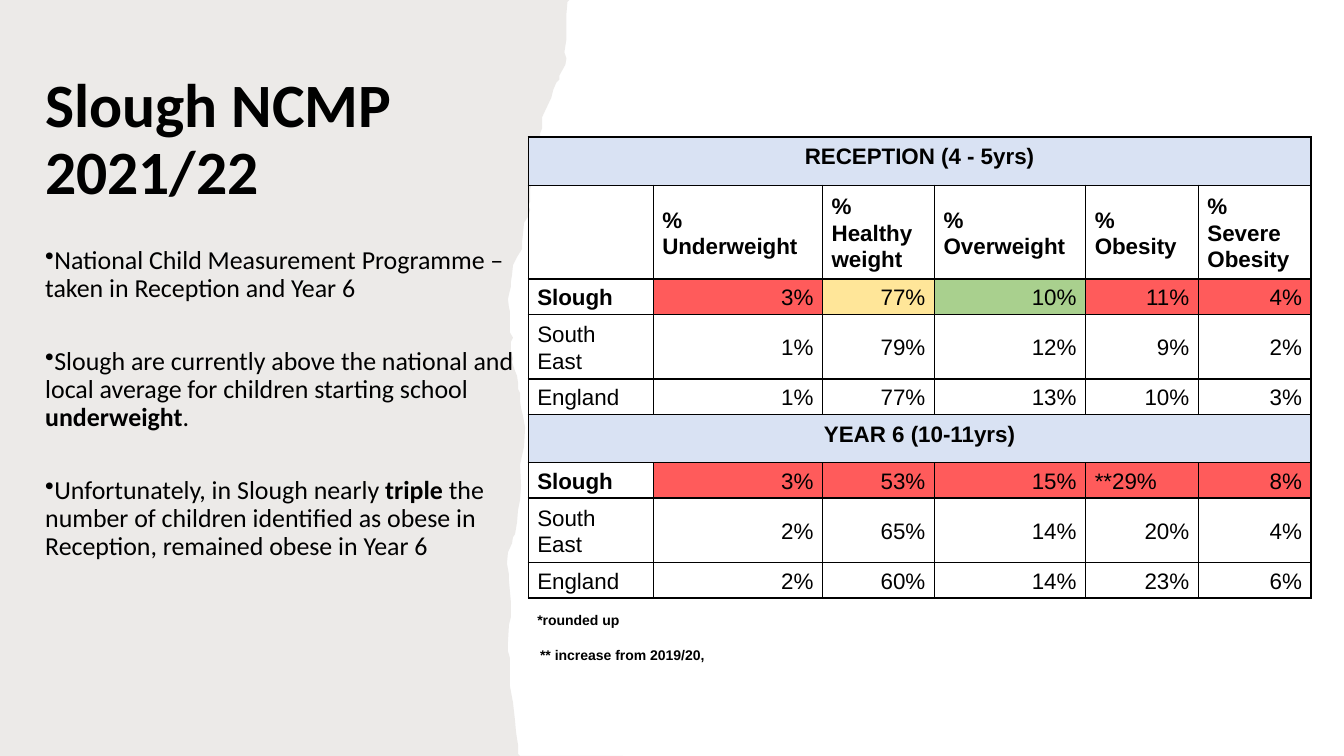
from dataclasses import dataclass
from typing import Any, NamedTuple

from lxml import etree
from pptx import Presentation
from pptx import util as u
from pptx.dml import color as dml
from pptx.enum import text
from pptx.oxml import ns

BLACK, RED, AMBER, GREEN, BANNER = "000000", "FF5B5B", "FFE699", "A9D08E", "D9E2F3"
LEFT, CENTER, RIGHT = text.PP_ALIGN.LEFT, text.PP_ALIGN.CENTER, text.PP_ALIGN.RIGHT
TOP, MIDDLE = text.MSO_ANCHOR.TOP, text.MSO_ANCHOR.MIDDLE


class Run(NamedTuple):
    text: str
    bold: bool = False


class Box(NamedTuple):
    left: float
    top: float
    width: float
    height: float


@dataclass(frozen=True)
class Entry:
    text: str = ""
    bold: bool = False
    size: float = 16
    align: Any = LEFT
    fill: str = ""
    banner: bool = False
    span: int = 1


COLUMNS = [3.15, 4.27, 2.82, 3.81, 2.84, 2.84]
HEIGHTS = [1.6, 1.22, 2.36, 0.89, 1.63, 0.89, 1.22, 0.89, 1.63, 0.89, 1.07, 1.07]
HEADINGS = ["Underweight", "Healthy weight", "Overweight", "Obesity", "Severe Obesity"]
RECEPTION = {
    "Slough": ["3%", "77%", "10%", "11%", "4%"],
    "South East": ["1%", "79%", "12%", "9%", "2%"],
    "England": ["1%", "77%", "13%", "10%", "3%"],
}
YEAR_6 = {
    "Slough": ["3%", "53%", "15%", "**29%", "8%"],
    "South East": ["2%", "65%", "14%", "20%", "4%"],
    "England": ["2%", "60%", "14%", "23%", "6%"],
}
POINTS = [
    [Run("National Child Measurement Programme – taken in Reception and Year 6")],
    [Run("Slough are currently above the national and local average for children "
         "starting school "), Run("underweight", True), Run(".")],
    [Run("Unfortunately, in Slough nearly "), Run("triple", True),
     Run(" the number of children identified as obese in Reception, "
         "remained obese in Year 6")],
]
TORN_EDGE = [
    (565, 0), (563, 2), (562, 14), (562, 20), (562, 39), (560, 52), (562, 58),
    (561, 64), (560, 66), (555, 75), (555, 79), (552, 82), (549, 89), (547, 97),
    (538, 116), (538, 127), (536, 132), (536, 142), (533, 149), (532, 154),
    (529, 160), (528, 169), (529, 173), (528, 180), (526, 188), (526, 197),
    (526, 200), (524, 204), (526, 208), (525, 212), (524, 215), (520, 221),
    (519, 231), (518, 240), (518, 247), (513, 255), (509, 263), (508, 273),
    (507, 279), (507, 284), (505, 292), (504, 297), (505, 305), (506, 309),
    (506, 326), (506, 330), (509, 335), (507, 339), (507, 348), (509, 356),
    (508, 359), (511, 368), (513, 373), (514, 380), (514, 386), (516, 390),
    (516, 398), (517, 405), (519, 413), (521, 424), (520, 443), (516, 461),
    (517, 482), (516, 496), (514, 506), (513, 518), (511, 530), (509, 533),
    (508, 539), (504, 548), (503, 559), (505, 570), (505, 576), (507, 598),
    (507, 612), (505, 620), (504, 637), (504, 646), (506, 653), (506, 681),
    (509, 697), (511, 715), (512, 726), (513, 733), (514, 739), (514, 748),
    (516, 750),
]


def rgb(value: str) -> dml.RGBColor:
    return dml.RGBColor.from_string(value)


def apply(target: Any, formats: dict[str, Any]) -> None:
    for name, value in formats.items():
        setattr(target, name, value)


def add_run(p: Any, run: Run, size: float, font: str) -> None:
    r = p.add_run()
    r.text = run.text
    apply(r.font, {"name": font, "size": u.Pt(size), "bold": run.bold})
    r.font.color.rgb = rgb(BLACK)


def add_paper(s: Any) -> None:
    builder = s.shapes.build_freeform(0, 0, scale=u.Cm(2.54) / 100)
    builder.add_line_segments(TORN_EDGE + [(618, 750), (0, 750)], close=True)
    sp = builder.convert_to_shape()
    sp.shadow.inherit = False
    sp.line.fill.background()
    sp.fill.solid()
    sp.fill.fore_color.rgb = rgb("82766A")
    shade = sp.fill._xPr.find(".//" + ns.qn("a:srgbClr"))
    etree.SubElement(shade, ns.qn("a:alpha"), val="15000")


def add_text(s: Any, box: Box, paragraphs: list[list[Run]], size: float,
             anchor: Any, gap: float = 0, bullet: str = "") -> None:
    tf = s.shapes.add_textbox(*map(u.Cm, box)).text_frame
    apply(tf, {"word_wrap": True, "vertical_anchor": anchor})
    for i, runs in enumerate(paragraphs):
        p = tf.add_paragraph() if i else tf.paragraphs[0]
        apply(p, {"line_spacing": 0.9, "space_after": u.Pt(gap)})
        if bullet:
            pPr = p._p.get_or_add_pPr()
            pPr.set("marL", "0")
            pPr.set("indent", str(-u.Cm(0.64)))
            etree.SubElement(pPr, ns.qn("a:buChar"), char=bullet)
        for run in runs:
            add_run(p, run, size, "Calibri")


def set_borders(cell: Any, sides: str) -> None:
    tcPr = cell._tc.get_or_add_tcPr()
    for i, side in enumerate("LRTB"):
        ln = etree.Element(ns.qn(f"a:ln{side}"), w=str(u.Pt(1)))
        if side in sides:
            fill = etree.SubElement(ln, ns.qn("a:solidFill"))
            etree.SubElement(fill, ns.qn("a:srgbClr"), val=BLACK)
        else:
            etree.SubElement(ln, ns.qn("a:noFill"))
        tcPr.insert(i, ln)


def fill_cell(cell: Any, entry: Entry) -> None:
    side, top, bottom = (0.3, 0.15, 0.15) if entry.banner else (0.23, 0.03, 0)
    apply(cell, {
        "margin_left": u.Cm(side), "margin_right": u.Cm(side),
        "margin_top": u.Cm(top), "margin_bottom": u.Cm(bottom),
        "vertical_anchor": TOP if entry.banner else MIDDLE,
    })
    p = cell.text_frame.paragraphs[0]
    apply(p, {"alignment": entry.align, "line_spacing": 1.07, "space_after": u.Pt(8)})
    add_run(p, Run(entry.text, entry.bold), entry.size, "Arial")


def region_rows(regions: dict[str, list[str]], shades: list[str]) -> list[list[Entry]]:
    rows = []
    for region, values in regions.items():
        local = region == "Slough"
        rows.append([Entry(region, local)] + [
            Entry(value, align=LEFT if value.startswith("**") else RIGHT,
                  fill=shade if local else "")
            for value, shade in zip(values, shades)])
    return rows


def banner_row(title: str) -> list[Entry]:
    return [Entry(title, True, align=CENTER, fill=BANNER, banner=True, span=6)]


def add_results(s: Any) -> None:
    rows = [
        [Entry(span=3)],
        banner_row("RECEPTION (4 - 5yrs)"),
        [Entry()] + [Entry(f"% {heading}", True) for heading in HEADINGS],
        *region_rows(RECEPTION, [RED, AMBER, GREEN, RED, RED]),
        banner_row("YEAR 6 (10-11yrs)"),
        *region_rows(YEAR_6, [RED] * 5),
        [Entry("*rounded up", True, 10)],
        [Entry("** increase from 2019/20,", True, 10, banner=True, span=2)],
    ]
    edges = {0: "B", 10: "T", 11: ""}
    box = Box(13.31, 1.85, sum(COLUMNS), sum(HEIGHTS))
    table = s.shapes.add_table(len(rows), len(COLUMNS), *map(u.Cm, box)).table
    apply(table, {"first_row": False, "horz_banding": False})
    for column, width in zip(table.columns, COLUMNS):
        column.width = u.Cm(width)
    for i, (entries, height) in enumerate(zip(rows, HEIGHTS)):
        table.rows[i].height = u.Cm(height)
        if entries[0].span > 1:
            table.cell(i, 0).merge(table.cell(i, entries[0].span - 1))
        for j in range(len(COLUMNS)):
            cell = table.cell(i, j)
            entry = entries[j] if j < len(entries) else Entry()
            if entry.text:
                fill_cell(cell, entry)
            if entry.fill:
                cell.fill.solid()
                cell.fill.fore_color.rgb = rgb(entry.fill)
            else:
                cell.fill.background()
            set_borders(cell, edges.get(i, "LRTB"))


def main() -> None:
    prs = Presentation()
    apply(prs, {"slide_width": u.Cm(33.87), "slide_height": u.Cm(19.05)})
    s = prs.slides.add_slide(prs.slide_layouts[6])
    add_paper(s)
    add_text(s, Box(0.89, 1.7, 11.84, 3.71), [[Run("Slough NCMP 2021/22", True)]], 44, MIDDLE)
    add_text(s, Box(0.89, 6.1, 12.34, 9.07), POINTS, 18.5, TOP, 32, "•")
    add_results(s)
    prs.save("out.pptx")


if __name__ == "__main__":
    main()
